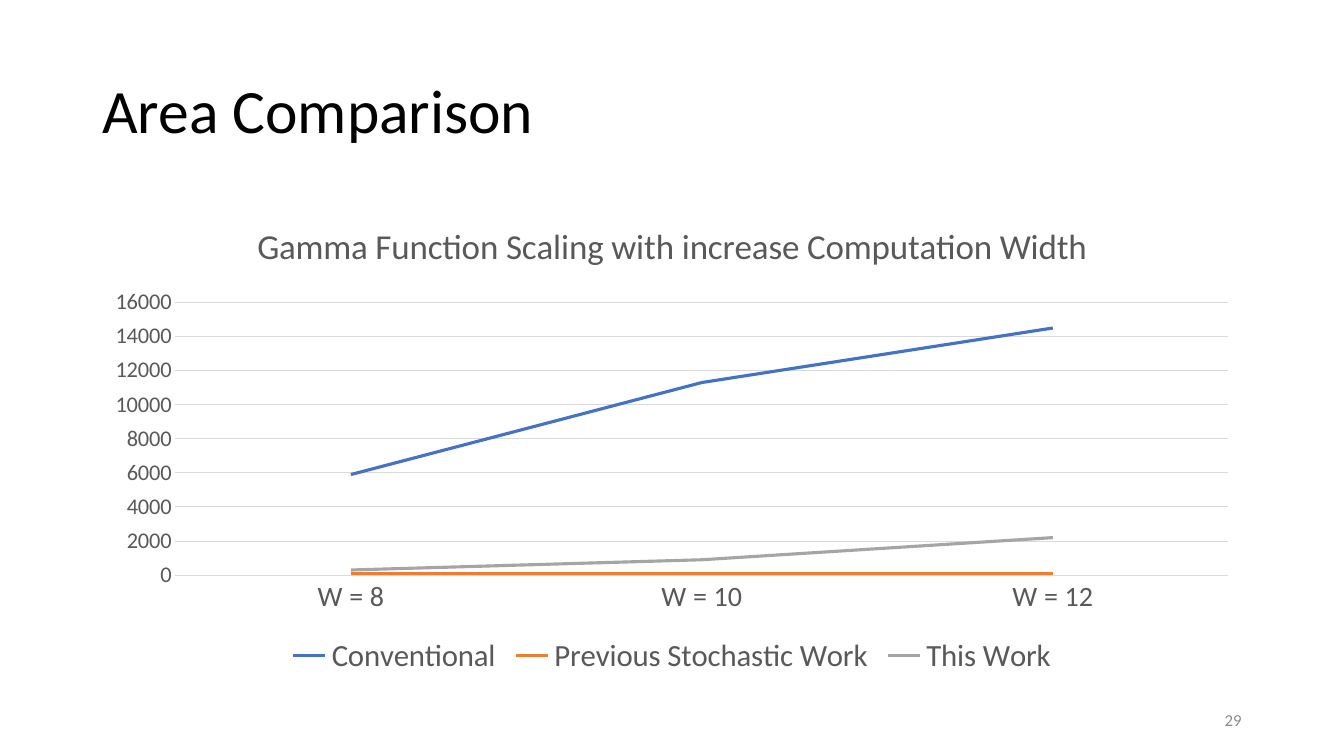
from dataclasses import dataclass

from pptx import Presentation
from pptx.chart import data
from pptx.dml import color
from pptx.enum import chart as kinds, text
from pptx.util import Pt


@dataclass(frozen=True)
class Theme:
    font: str = "Calibri"
    ink: str = "000000"
    label: str = "595959"
    grid: str = "D9D9D9"
    page: str = "8C8C8C"
    heading_size: int = 44
    chart_title_size: int = 25
    legend_size: int = 22
    category_size: int = 20
    value_size: int = 16
    page_size: int = 12


theme = Theme()


def style_font(font, size, shade):
    font.name = theme.font
    font.size = Pt(size)
    font.bold = False
    font.color.rgb = color.RGBColor.from_string(shade)


def add_label(slide, wording, box, size, shade, align):
    frame = slide.shapes.add_textbox(*map(Pt, box)).text_frame
    frame.word_wrap = True
    frame.vertical_anchor = text.MSO_ANCHOR.MIDDLE
    paragraph = frame.paragraphs[0]
    paragraph.alignment = align
    paragraph.line_spacing = 0.9
    run = paragraph.add_run()
    run.text = wording
    style_font(run.font, size, shade)


deck = Presentation()
deck.slide_width, deck.slide_height = Pt(960), Pt(540)
slide = deck.slides.add_slide(deck.slide_layouts[6])

add_label(slide, "Area Comparison", (66, 28.75, 828, 104.4),
          theme.heading_size, theme.ink, text.PP_ALIGN.LEFT)

areas = {
    "Conventional": ("4472C4", (5900, 11300, 14500)),
    "Previous Stochastic Work": ("ED7D31", (100, 100, 100)),
    "This Work": ("A5A5A5", (300, 900, 2200)),
}
scaling = data.CategoryChartData()
scaling.categories = [f"W = {width}" for width in (8, 10, 12)]
for design, (_, values) in areas.items():
    scaling.add_series(design, values)

comparison = slide.shapes.add_chart(
    kinds.XL_CHART_TYPE.LINE, Pt(66), Pt(143.75), Pt(828), Pt(342.6), scaling
).chart
style_font(comparison.font, theme.value_size, theme.label)

comparison.has_title = True
chart_title = comparison.chart_title
chart_title.include_in_layout = False
title_run = chart_title.text_frame.paragraphs[0].add_run()
title_run.text = "Gamma Function Scaling with increase Computation Width"
style_font(title_run.font, theme.chart_title_size, theme.label)

comparison.has_legend = True
legend = comparison.legend
legend.position = kinds.XL_LEGEND_POSITION.BOTTOM
legend.include_in_layout = False
style_font(legend.font, theme.legend_size, theme.label)

widths, area = comparison.category_axis, comparison.value_axis
for axis, size in ((widths, theme.category_size), (area, theme.value_size)):
    axis.major_tick_mark = kinds.XL_TICK_MARK.NONE
    axis.minor_tick_mark = kinds.XL_TICK_MARK.NONE
    style_font(axis.tick_labels.font, size, theme.label)
area.minimum_scale, area.maximum_scale, area.major_unit = 0, 16000, 2000
area.format.line.fill.background()
area.has_major_gridlines = True
for line in (widths.format.line, area.major_gridlines.format.line):
    line.width = Pt(0.75)
    line.color.rgb = color.RGBColor.from_string(theme.grid)

plot = comparison.plots[0]
plot.vary_by_categories = False
for series, (shade, _) in zip(plot.series, areas.values()):
    series.smooth = False
    series.marker.style = kinds.XL_MARKER_STYLE.NONE
    series.format.line.width = Pt(2.25)
    series.format.line.color.rgb = color.RGBColor.from_string(shade)

add_label(slide, "29", (678, 500.5, 216, 28.75),
          theme.page_size, theme.page, text.PP_ALIGN.RIGHT)

deck.save("out.pptx")
